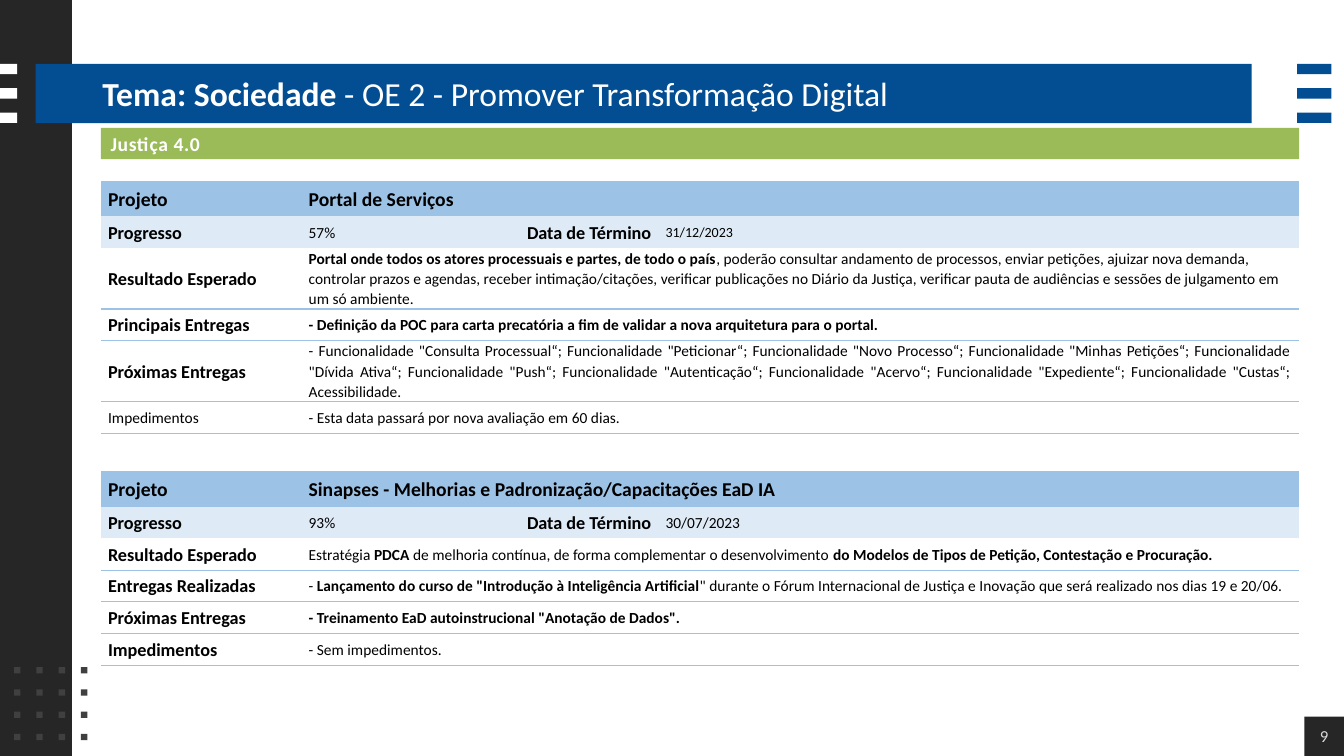
import pptx
import pptx.util
import pptx.dml.color
import pptx.enum.shapes
import pptx.enum.text
import pptx.oxml
import pptx.oxml.ns
from lxml import etree

Pt = pptx.util.Pt
PP_ALIGN = pptx.enum.text.PP_ALIGN
MIDDLE = pptx.enum.text.MSO_ANCHOR.MIDDLE
LEFT, RIGHT, CENTER, JUSTIFY = PP_ALIGN.LEFT, PP_ALIGN.RIGHT, PP_ALIGN.CENTER, PP_ALIGN.JUSTIFY

COLORS = {
    "dark": "262626", "blue": "034D92", "white": "FFFFFF", "dot": "404040",
    "green": "9BBB59", "header": "9CC2E5", "progress": "DEEAF6",
    "black": "000000", "page": "D9D9D9",
}
NO_STYLE = "{2D5ABB26-0587-4C30-8999-92F81FD0307C}"

# Runs are (text, bold) pairs.
TITLE = [("Tema: Sociedade ", True), ("- OE 2 - Promover Transformação Digital", False)]
PROGRAM = [("Justiça 4.0", True)]
PAGE = [("9", False)]

# Each detail: label, label size, label bold, alignment, runs.
PROJECTS = [
    {
        "top": 129, "height": 177.1, "name": "Portal de Serviços",
        "progress": "57%", "end": "31/12/2023", "end_size": 10,
        "details": [
            ("Resultado Esperado", 13, True, LEFT, [
                ("Portal onde todos os atores processuais e partes, de todo o país", True),
                (", poderão consultar andamento de processos, enviar petições, ajuizar nova demanda, "
                 "controlar prazos e agendas, receber intimação/citações, verificar publicações no "
                 "Diário da Justiça, verificar pauta de audiências e sessões de julgamento em um só "
                 "ambiente.", False)]),
            ("Principais Entregas", 13, True, JUSTIFY, [
                ("- Definição da POC para carta precatória a fim de validar a nova arquitetura "
                 "para o portal.", True)]),
            ("Próximas Entregas", 13, True, JUSTIFY, [
                ('- Funcionalidade "Consulta Processual“; Funcionalidade "Peticionar“; '
                 'Funcionalidade "Novo Processo“; Funcionalidade "Minhas Petições“; '
                 'Funcionalidade "Dívida Ativa“; Funcionalidade "Push“; '
                 'Funcionalidade "Autenticação“; Funcionalidade "Acervo“; '
                 'Funcionalidade "Expediente“; Funcionalidade "Custas“; Acessibilidade.', False)]),
            ("Impedimentos", 11, False, JUSTIFY, [
                ("- Esta data passará por nova avaliação em 60 dias.", False)]),
        ],
    },
    {
        "top": 336.4, "height": 139, "name": "Sinapses - Melhorias e Padronização/Capacitações EaD IA",
        "progress": "93%", "end": "30/07/2023", "end_size": 11,
        "details": [
            ("Resultado Esperado", 13, True, JUSTIFY, [
                ("Estratégia ", False), ("PDCA", True),
                (" de melhoria contínua, de forma complementar o desenvolvimento ", False),
                ("do Modelos de Tipos de Petição, Contestação e Procuração.", True)]),
            ("Entregas Realizadas", 13, True, LEFT, [
                ("- ", False),
                ('Lançamento do curso de "Introdução à Inteligência Artificial', True),
                ('" durante o Fórum Internacional de Justiça e Inovação que será realizado '
                 'nos dias 19 e 20/06.', False)]),
            ("Próximas Entregas", 13, True, JUSTIFY, [
                ('- Treinamento EaD autoinstrucional "Anotação de Dados".', True)]),
            ("Impedimentos", 13, True, JUSTIFY, [("- Sem impedimentos.", False)]),
        ],
    },
]

TABLE_LEFT = 72
COLUMN_WIDTHS = [143.3, 127.5, 127.5, 457.7]
HEADER_HEIGHT, ROW_HEIGHT = 25.5, 22.7
CELL_INSET = 5.2


def rgb(color):
    return pptx.dml.color.RGBColor.from_string(COLORS[color])


def write(frame, runs, size, color="black", align=LEFT, line=None, after=None, tracking=None):
    frame.word_wrap = True
    paragraph = frame.paragraphs[0]
    paragraph.alignment = align
    if line:
        paragraph.line_spacing = line
    if after:
        paragraph.space_after = Pt(after)
    for text, bold in runs:
        run = paragraph.add_run()
        run.text = text
        run.font.name = "Calibri"
        run.font.size = Pt(size)
        run.font.bold = bold
        run.font.color.rgb = rgb(color)
        if tracking:
            run.font._element.set("spc", str(tracking))


def add_bar(slide, left, top, width, height, color):
    bar = slide.shapes.add_shape(pptx.enum.shapes.MSO_SHAPE.RECTANGLE,
                                 Pt(left), Pt(top), Pt(width), Pt(height))
    bar.shadow.inherit = False
    bar.fill.solid()
    bar.fill.fore_color.rgb = rgb(color)
    bar.line.fill.background()
    return bar


def add_decoration(slide):
    add_bar(slide, 0, 0, 51.4, 540, "dark")
    add_bar(slide, 25.5, 45.6, 868.5, 42.4, "blue")
    for left, width, color in [(0, 12.3, "white"), (926.6, 24.5, "blue")]:
        for row in range(3):
            add_bar(slide, left, 45.6 + 17.4 * row, width, 7.4, color)
    for row in range(4):
        for column in range(4):
            add_bar(slide, 10.1 + 15.9 * column, 476.5 + 15.9 * row, 4.6, 4.6, "dot")


def fill_cell(cell, runs, size, align=LEFT, fill=None, rules=()):
    """Write a cell; rules lists the border tags that get a line."""
    cell.vertical_anchor = MIDDLE
    cell.margin_left = cell.margin_right = Pt(CELL_INSET)
    cell.margin_top = cell.margin_bottom = 0
    properties = cell._tc.get_or_add_tcPr()
    for tag in rules:
        border = etree.SubElement(properties, pptx.oxml.ns.qn(tag), w=str(Pt(1)))
        solid = etree.SubElement(border, pptx.oxml.ns.qn("a:solidFill"))
        etree.SubElement(solid, pptx.oxml.ns.qn("a:srgbClr"), val=COLORS["header"])
    if fill:
        cell.fill.solid()
        cell.fill.fore_color.rgb = rgb(fill)
    else:
        cell.fill.background()
    write(cell.text_frame, runs, size, align=align, line=1.07, after=8)


def add_project(slide, project):
    details = project["details"]
    holder = slide.shapes.add_table(2 + len(details), len(COLUMN_WIDTHS), Pt(TABLE_LEFT),
                                    Pt(project["top"]), Pt(sum(COLUMN_WIDTHS)), Pt(project["height"]))
    table = holder.table
    table.first_row = table.horz_banding = False
    for style in holder.element.iter(pptx.oxml.ns.qn("a:tableStyleId")):
        style.text = NO_STYLE
    for column, width in zip(table.columns, COLUMN_WIDTHS):
        column.width = Pt(width)
    for index, row in enumerate(table.rows):
        row.height = Pt(ROW_HEIGHT if index else HEADER_HEIGHT)
        if index != 1:
            table.cell(index, 1).merge(table.cell(index, 3))
    holder.height = Pt(project["height"])

    fill_cell(table.cell(0, 0), [("Projeto", True)], 14, fill="header")
    fill_cell(table.cell(0, 1), [(project["name"], True)], 14, fill="header")
    progress_row = [
        ("Progresso", True, 13, LEFT), (project["progress"], False, 11, LEFT),
        ("Data de Término", True, 13, RIGHT), (project["end"], False, project["end_size"], LEFT),
    ]
    for column, (text, bold, size, align) in enumerate(progress_row):
        fill_cell(table.cell(1, column), [(text, bold)], size, align, fill="progress")
    for row, (label, size, bold, align, runs) in enumerate(details, start=2):
        rules = ["a:lnB"] if row == 2 else ["a:lnT", "a:lnB"]
        fill_cell(table.cell(row, 0), [(label, bold)], size, rules=rules)
        fill_cell(table.cell(row, 1), runs, 11, align, rules=rules)
        for column in (2, 3):
            fill_cell(table.cell(row, column), [], 11, rules=rules)


def main():
    deck = pptx.Presentation()
    deck.slide_width, deck.slide_height = Pt(960), Pt(540)
    slide = deck.slides.add_slide(deck.slide_layouts[5])
    add_decoration(slide)

    title = slide.shapes.title
    title.left, title.top, title.width, title.height = Pt(66), Pt(46), Pt(828), Pt(40.5)
    title.text_frame.vertical_anchor = MIDDLE
    write(title.text_frame, TITLE, 24, "white")
    slide.shapes.element.append(title.element)  # bring the title in front of its bar

    page = add_bar(slide, 931.7, 511.8, 28.3, 28.2, "dark").text_frame
    page.margin_left = page.margin_right = page.margin_top = page.margin_bottom = 0
    page.vertical_anchor = MIDDLE
    write(page, PAGE, 12, "page", CENTER)

    program = add_bar(slide, TABLE_LEFT, 91.4, 856, 22.4, "green").text_frame
    program.vertical_anchor = MIDDLE
    write(program, PROGRAM, 14, "white", tracking=40)

    for project in PROJECTS:
        add_project(slide, project)
    deck.save("out.pptx")


if __name__ == "__main__":
    main()
